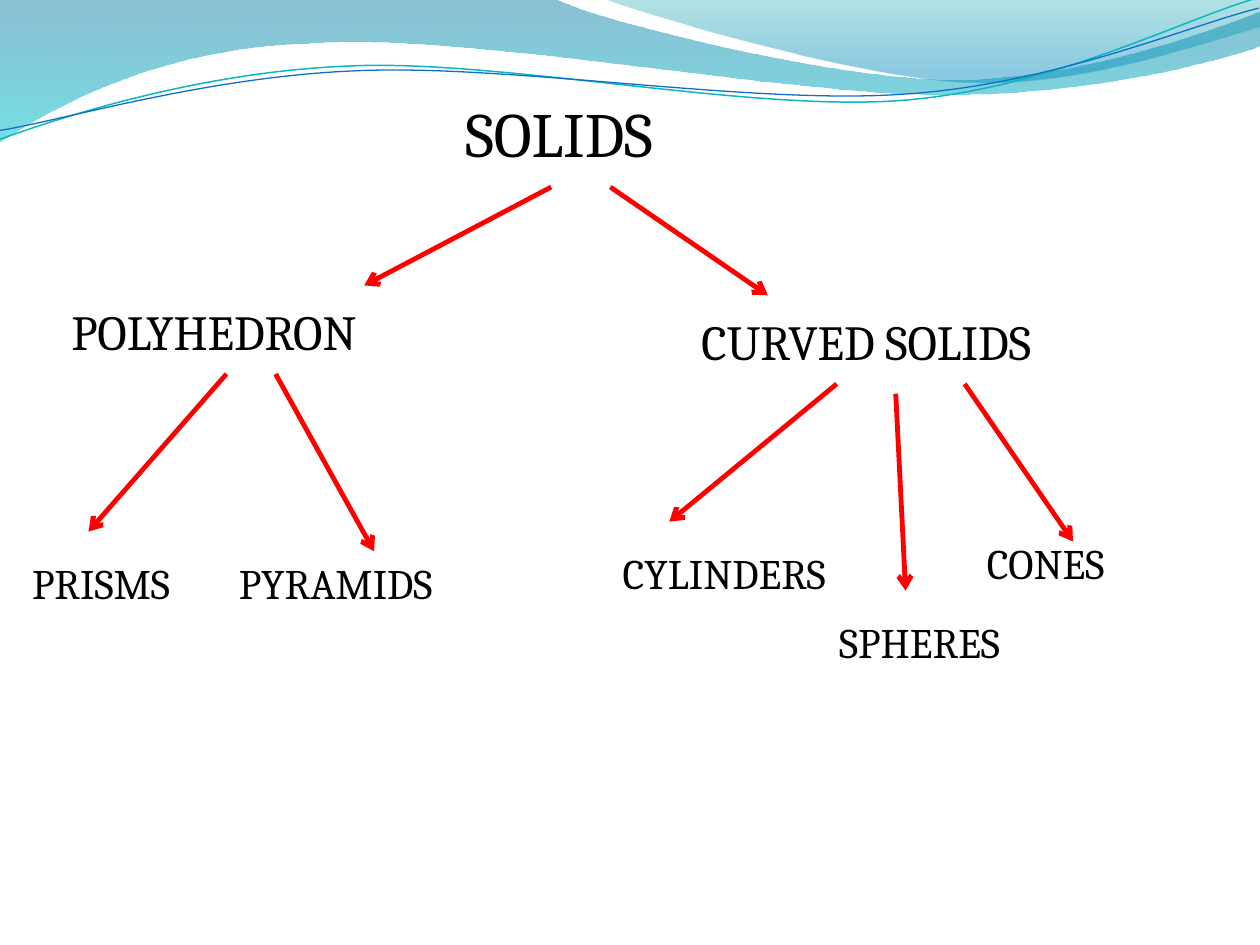
"""Build a slide with a tree that sorts solids into polyhedra and curved solids."""
from lxml.etree import SubElement
from pptx import Presentation
from pptx.dml.color import RGBColor
from pptx.enum.shapes import MSO_CONNECTOR
from pptx.enum.text import MSO_ANCHOR, MSO_AUTO_SIZE, PP_ALIGN
from pptx.oxml.ns import qn
from pptx.util import Inches, Pt

rgb = RGBColor.from_string
deck = Presentation()
deck.slide_width, deck.slide_height = Inches(10), Inches(7.5)
slide = deck.slides.add_slide(deck.slide_layouts[5])
shapes = slide.shapes
cell = deck.slide_width / 128


def wave(start, parts, close):
    """Draw a path whose parts are line ends (2 values) or cubic curves (6)."""
    dots = [(Inches(part[n]), Inches(part[n + 1]))
            for part in parts for n in range(0, len(part), 2)]
    pen = shapes.build_freeform(Inches(start[0]), Inches(start[1]))
    pen.add_line_segments(dots, close=close)
    shape = pen.convert_to_shape()
    shape.shadow.inherit = False
    route = shape.element.find(".//" + qn("a:path"))
    legs = iter(route.findall(qn("a:lnTo")))
    for part in parts:
        leg = next(legs)
        if len(part) == 6:
            leg.tag = qn("a:cubicBezTo")
            for _ in range(2):
                extra = next(legs)
                leg.append(extra[0])
                route.remove(extra)
    return shape


bands = [
    ((0, 0), [(4.4, -0.01), (4.76, 0.17, 6.64, 0.63, 7.58, 0.63),
              (8.53, 0.63, 9.58, 0.26, 10, 0.09), (10.01, 0.36),
              (9.83, 0.44, 8.7, 0.76, 7.46, 0.75), (6.22, 0.75, 3.82, 0.28, 2.57, 0.34),
              (1.29, 0.36, 0.46, 0.83, -0.01, 1.13), (0, 0)],
     [(0, "0074A1", 45), (1, "00C6CF", 55)]),
    ((4.79, -0.01), [(5.09, 0.11, 6.82, 0.62, 7.69, 0.65),
                     (8.56, 0.69, 9.61, 0.32, 10, 0.21), (10, 0), (4.79, -0.01)],
     [(0, "00A1A9", 30), (0.8, "008BBF", 45)]),
]
for start, parts, stops in bands:
    band = wave(start, parts, True)
    band.line.fill.background()
    band.fill.gradient()
    band.fill.gradient_angle = 270
    for stop, (place, tone, _) in zip(band.fill.gradient_stops, stops):
        stop.position = place
        stop.color.rgb = rgb(tone)
    tones = band.element.spPr.findall(".//" + qn("a:srgbClr"))
    for node, (_, _, share) in zip(tones, stops):
        SubElement(node, qn("a:alpha"), val=str(share * 1000))

threads = [
    ((-0.02, 0.87), [(0.47, 0.72, 1.58, 0.41, 2.78, 0.42), (3.96, 0.42, 5.91, 0.93, 7.12, 0.9),
                     (8.32, 0.87, 9.4, 0.36, 10, 0.22)], "0AB8BF", 0.85),
    ((-0.02, 0.8), [(0.46, 0.75, 1.64, 0.45, 2.83, 0.46), (4.03, 0.46, 5.96, 0.88, 7.16, 0.85),
                    (8.35, 0.83, 9.42, 0.42, 10.01, 0.3)], "0F6FC6", 0.75),
]
for start, parts, tone, width in threads:
    thread = wave(start, parts, False)
    thread.rotation = 357.3
    thread.fill.background()
    thread.line.color.rgb = rgb(tone)
    thread.line.width = Pt(width)

labels = [
    ("SOLIDS", 46, 9, 32, 9, 36),
    ("POLYHEDRON", 6, 30, 46, 7.3, 28),
    ("CURVED SOLIDS", 70, 31, 46, 7.3, 28),
    ("PRISMS", 2, 56, 22, 6.4, 24),
    ("PYRAMIDS", 23, 56, 25, 6.4, 24),
    ("CYLINDERS", 62, 55, 27, 6.4, 24),
    ("CONES", 99, 54, 22, 6.4, 24),
    ("SPHERES", 84, 62, 22, 6.4, 24),
]
for words, col, row, wide, high, size in labels:
    box = shapes.title if words == "SOLIDS" else shapes.add_textbox(0, 0, 0, 0)
    spots = {"left": col, "top": row, "width": wide, "height": high}
    for name, count in spots.items():
        setattr(box, name, round(count * cell))
    frame = box.text_frame
    frame.text = words
    looks = {"word_wrap": True, "auto_size": MSO_AUTO_SIZE.SHAPE_TO_FIT_TEXT,
             "vertical_anchor": MSO_ANCHOR.TOP}
    for name, value in looks.items():
        setattr(frame, name, value)
    para = frame.paragraphs[0]
    para.alignment = PP_ALIGN.LEFT
    font = para.runs[0].font
    for name, value in {"name": "Cambria", "size": Pt(size)}.items():
        setattr(font, name, value)
    font.color.rgb = rgb("000000")

arrows = [
    (56, 19, 37, 29), (62, 19, 78, 30),
    (23, 38, 9, 54), (28, 38, 38, 56),
    (85, 39, 68, 53), (91, 40, 92, 60), (98, 39, 109, 55),
]
for ends in arrows:
    arrow = shapes.add_connector(MSO_CONNECTOR.STRAIGHT, *[round(n * cell) for n in ends])
    arrow.line.color.rgb = rgb("FF0000")
    arrow.line.width = Pt(2.75)
    edge = arrow.element.spPr.find(qn("a:ln"))
    SubElement(edge, qn("a:tailEnd"), type="arrow")
    SubElement(arrow.element.spPr, qn("a:effectLst"))

deck.save("out.pptx")
